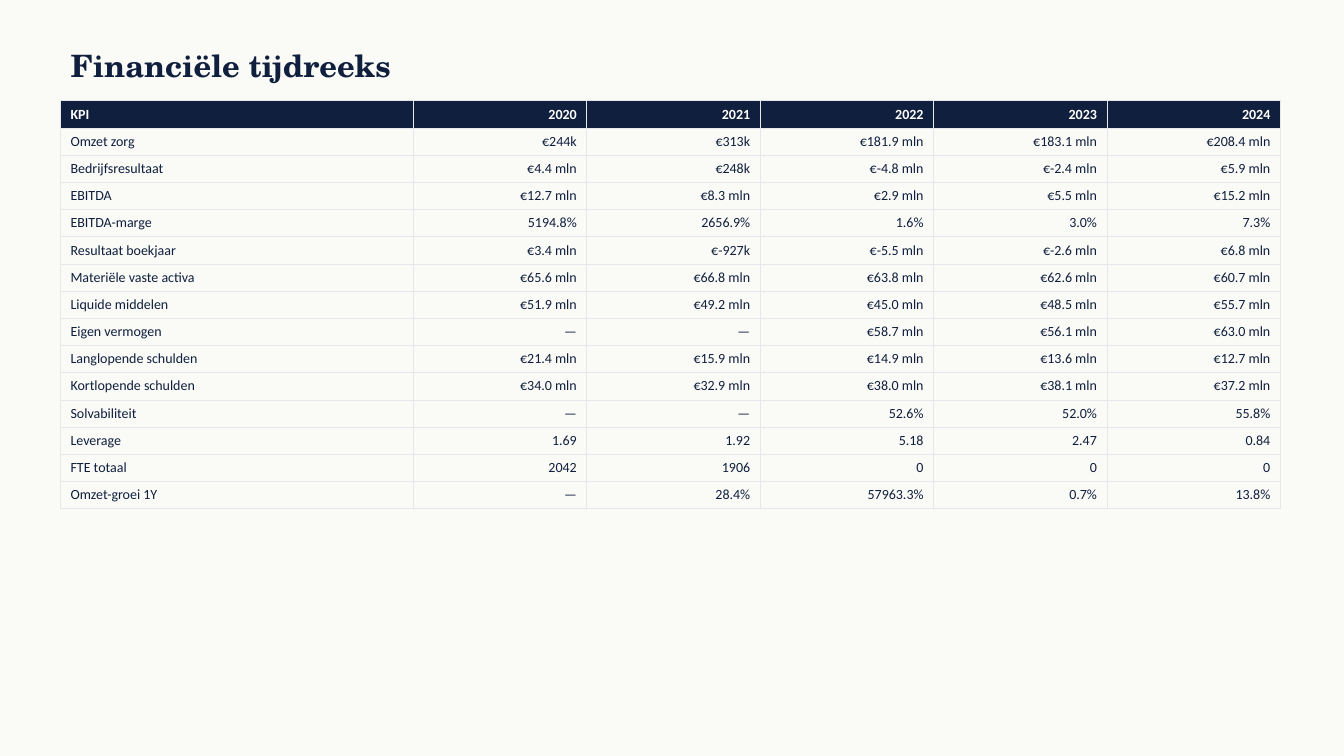
"""Build the slide with the financial time series table."""
from dataclasses import dataclass

from lxml.etree import SubElement
from pptx import Presentation
from pptx.dml.color import RGBColor as RGB
from pptx.enum.text import MSO_ANCHOR as ANCHOR, PP_ALIGN as ALIGN
from pptx.oxml.ns import qn
from pptx.util import Inches, Pt

TITLE = "Financiële tijdreeks"
HEADER = ("KPI", "2020", "2021", "2022", "2023", "2024")
ROWS = [
    ("Omzet zorg", "€244k", "€313k", "€181.9 mln", "€183.1 mln", "€208.4 mln"),
    ("Bedrijfsresultaat", "€4.4 mln", "€248k", "€-4.8 mln", "€-2.4 mln", "€5.9 mln"),
    ("EBITDA", "€12.7 mln", "€8.3 mln", "€2.9 mln", "€5.5 mln", "€15.2 mln"),
    ("EBITDA-marge", "5194.8%", "2656.9%", "1.6%", "3.0%", "7.3%"),
    ("Resultaat boekjaar", "€3.4 mln", "€-927k", "€-5.5 mln", "€-2.6 mln", "€6.8 mln"),
    ("Materiële vaste activa", "€65.6 mln", "€66.8 mln", "€63.8 mln", "€62.6 mln", "€60.7 mln"),
    ("Liquide middelen", "€51.9 mln", "€49.2 mln", "€45.0 mln", "€48.5 mln", "€55.7 mln"),
    ("Eigen vermogen", "—", "—", "€58.7 mln", "€56.1 mln", "€63.0 mln"),
    ("Langlopende schulden", "€21.4 mln", "€15.9 mln", "€14.9 mln", "€13.6 mln", "€12.7 mln"),
    ("Kortlopende schulden", "€34.0 mln", "€32.9 mln", "€38.0 mln", "€38.1 mln", "€37.2 mln"),
    ("Solvabiliteit", "—", "—", "52.6%", "52.0%", "55.8%"),
    ("Leverage", "1.69", "1.92", "5.18", "2.47", "0.84"),
    ("FTE totaal", "2042", "1906", "0", "0", "0"),
    ("Omzet-groei 1Y", "—", "28.4%", "57963.3%", "0.7%", "13.8%"),
]

LEFT, TITLE_TOP, TABLE_TOP = 0.6, 0.4, 1
TITLE_W, TITLE_H = 12, 0.5
TABLE_W, LABEL_W, ROW_H = 12.1, 3.5, 0.27


@dataclass(frozen=True)
class Theme:
    paper: str = "FAFAF7"
    navy: str = "0F1F3D"
    white: str = "FFFFFF"
    rule: str = "E5E7EB"
    rule_pt: float = 0.5
    title_font: str = "TeX Gyre Schola"
    body_font: str = "Calibri"
    title_pt: int = 22
    body_pt: int = 10


THEME = Theme()


def set_font(p, name, size, color, bold):
    p.font.name, p.font.size, p.font.bold = name, Pt(size), bold
    p.font.color.rgb = RGB.from_string(color)


def add_borders(cell):
    tc_pr = cell._tc.get_or_add_tcPr()
    for side in ("lnL", "lnR", "lnT", "lnB"):
        ln = SubElement(tc_pr, qn(f"a:{side}"), w=str(Pt(THEME.rule_pt)))
        fill = SubElement(ln, qn("a:solidFill"))
        SubElement(fill, qn("a:srgbClr"), val=THEME.rule)


def add_title(s):
    title = s.shapes.title
    title.left, title.top = Inches(LEFT), Inches(TITLE_TOP)
    title.width, title.height = Inches(TITLE_W), Inches(TITLE_H)
    tf = title.text_frame
    tf.text, tf.vertical_anchor = TITLE, ANCHOR.MIDDLE
    p = tf.paragraphs[0]
    p.alignment = ALIGN.LEFT
    set_font(p, THEME.title_font, THEME.title_pt, THEME.navy, True)


def fill_cell(cell, text, is_header, is_label):
    add_borders(cell)
    if is_header:
        cell.fill.solid()
        cell.fill.fore_color.rgb = RGB.from_string(THEME.navy)
    else:
        cell.fill.background()
    cell.text = text
    p = cell.text_frame.paragraphs[0]
    p.alignment = ALIGN.LEFT if is_label else ALIGN.RIGHT
    color = THEME.white if is_header else THEME.navy
    set_font(p, THEME.body_font, THEME.body_pt, color, is_header)


def add_kpi_table(s):
    rows = [HEADER, *ROWS]
    n_rows, n_cols = len(rows), len(HEADER)
    table = s.shapes.add_table(
        n_rows, n_cols, Inches(LEFT), Inches(TABLE_TOP), Inches(TABLE_W), Inches(ROW_H * n_rows)
    ).table
    table.horz_banding = False
    year_w = (TABLE_W - LABEL_W) / (n_cols - 1)
    for c, column in enumerate(table.columns):
        column.width = Inches(year_w if c else LABEL_W)
    for r, row in enumerate(rows):
        table.rows[r].height = Inches(ROW_H)
        for c, text in enumerate(row):
            fill_cell(table.cell(r, c), text, r == 0, c == 0)


def main():
    prs = Presentation()
    prs.slide_width, prs.slide_height = Inches(13.33), Inches(7.5)
    s = prs.slides.add_slide(prs.slide_layouts[5])
    s.background.fill.solid()
    s.background.fill.fore_color.rgb = RGB.from_string(THEME.paper)
    add_title(s)
    add_kpi_table(s)
    prs.save("out.pptx")


if __name__ == "__main__":
    main()
